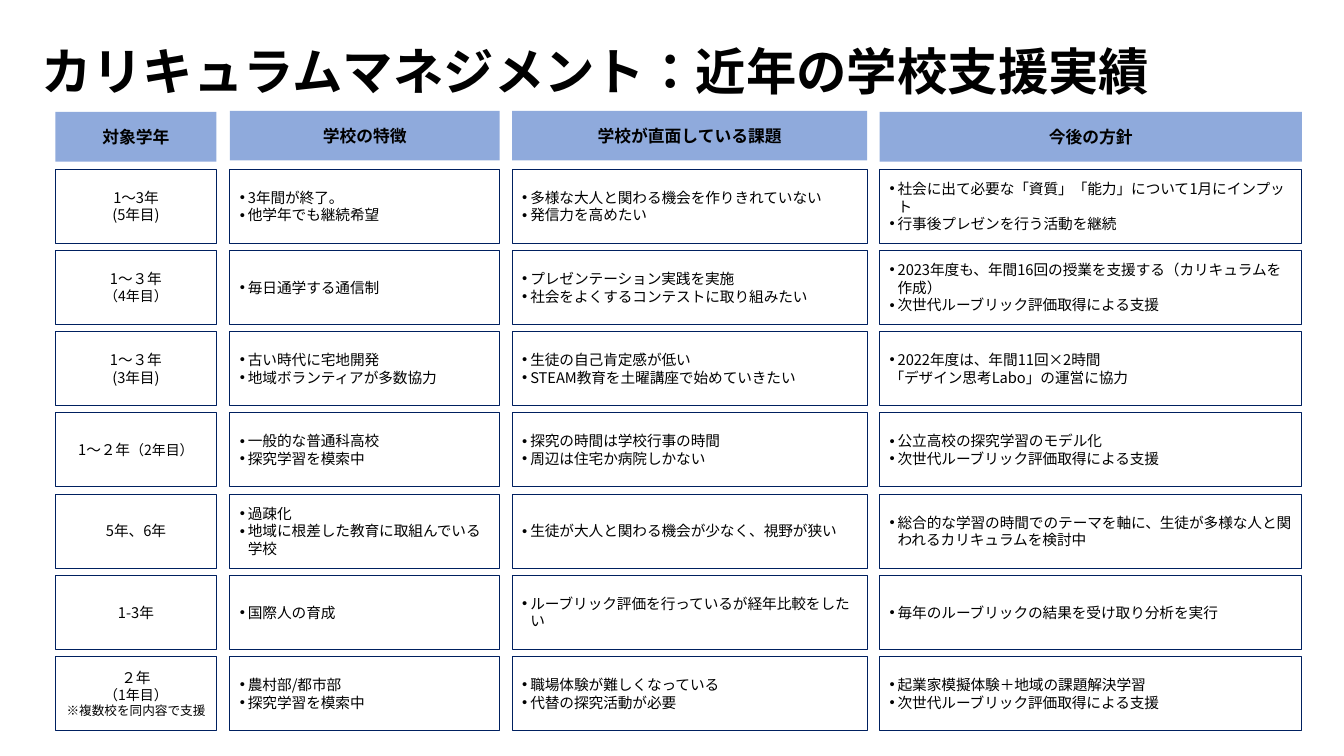
import lxml.etree
import pptx
import pptx.dml.color
import pptx.enum.lang
import pptx.enum.shapes
import pptx.enum.text
import pptx.oxml.ns
import pptx.util

Pt = pptx.util.Pt
ALIGN = pptx.enum.text.PP_ALIGN
MIDDLE = pptx.enum.text.MSO_ANCHOR.MIDDLE
COLORS = {"text": "000000", "header": "8FAADC", "border": "002060"}

# Columns: left, width, header top, header text
COLUMNS = [
    (39.6, 115, 80, "対象学年"),
    (164.2, 192.7, 79.2, "学校の特徴"),
    (365.9, 253.5, 79.2, "学校が直面している課題"),
    (628.3, 301.7, 80, "今後の方針"),
]
HEADER_HEIGHT = 35.4
ROW_TOP, ROW_PITCH, ROW_HEIGHT = 120.9, 58, 52.9

# Rows: grade lines, each a list of (text, size), then three lists of points
ROWS = [
    ([[("1～3年", 10.5)], [("(5年目)", 10.5)]],
     ["3年間が終了。", "他学年でも継続希望"],
     ["多様な大人と関わる機会を作りきれていない", "発信力を高めたい"],
     ["社会に出て必要な「資質」「能力」について1月にインプット",
      "行事後プレゼンを行う活動を継続"]),
    ([[("1～３年", 10.5)], [("（4年目）", 10)]],
     ["毎日通学する通信制"],
     ["プレゼンテーション実践を実施", "社会をよくするコンテストに取り組みたい"],
     ["2023年度も、年間16回の授業を支援する（カリキュラムを作成）",
      "次世代ルーブリック評価取得による支援"]),
    ([[("1～３年", 10.5)], [("(3年目)", 10.5)]],
     ["古い時代に宅地開発", "地域ボランティアが多数協力"],
     ["生徒の自己肯定感が低い", "STEAM教育を土曜講座で始めていきたい"],
     ["2022年度は、年間11回×2時間", "「デザイン思考Labo」の運営に協力"]),
    ([[("1～２年", 10.5), ("（2年目）", 10)]],
     ["一般的な普通科高校", "探究学習を模索中"],
     ["探究の時間は学校行事の時間", "周辺は住宅か病院しかない"],
     ["公立高校の探究学習のモデル化", "次世代ルーブリック評価取得による支援"]),
    ([[("5年、6年", 10.5)]],
     ["過疎化", "地域に根差した教育に取組んでいる学校"],
     ["生徒が大人と関わる機会が少なく、視野が狭い"],
     ["総合的な学習の時間でのテーマを軸に、生徒が多様な人と関われるカリキュラムを検討中"]),
    ([[("1-3年", 10.5)]],
     ["国際人の育成"],
     ["ルーブリック評価を行っているが経年比較をしたい"],
     ["毎年のルーブリックの結果を受け取り分析を実行"]),
    ([[("２年", 10.5)], [("（1年目）", 10)], [("※複数校を同内容で支援", 9)]],
     ["農村部/都市部", "探究学習を模索中"],
     ["職場体験が難しくなっている", "代替の探究活動が必要"],
     ["起業家模擬体験＋地域の課題解決学習", "次世代ルーブリック評価取得による支援"]),
]


class SlideBuilder:
    title_font = "Arial"
    body_font = "Noto Sans CJK JP"

    def __init__(self, slide):
        self.slide = slide

    def color(self, name):
        return pptx.dml.color.RGBColor.from_string(COLORS[name])

    def span(self, para, text, size, font, bold=False):
        span = para.add_run()
        span.text = text
        span.font.size = Pt(size)
        span.font.name = font
        span.font.bold = bold
        span.font.language_id = pptx.enum.lang.MSO_LANGUAGE_ID.JAPANESE
        span.font.color.rgb = self.color("text")
        east_asian = lxml.etree.SubElement(
            span.font._element, pptx.oxml.ns.qn("a:ea"))
        east_asian.set("typeface", self.body_font)

    def title(self, text):
        box = self.slide.shapes.title
        box.left, box.top, box.width, box.height = Pt(30), Pt(37.4), Pt(900), Pt(33.1)
        frame = box.text_frame
        frame.margin_left = frame.margin_right = 0
        frame.margin_top = frame.margin_bottom = 0
        frame.vertical_anchor = MIDDLE
        frame.word_wrap = True
        frame.auto_size = pptx.enum.text.MSO_AUTO_SIZE.NONE
        para = frame.paragraphs[0]
        para.alignment = ALIGN.LEFT
        para.line_spacing = 0.8
        self.span(para, text, 36, self.title_font, bold=True)

    def box(self, left, top, width, height, fill=None, line=None):
        box = self.slide.shapes.add_shape(
            pptx.enum.shapes.MSO_SHAPE.RECTANGLE,
            Pt(left), Pt(top), Pt(width), Pt(height))
        box.shadow.inherit = False
        if fill:
            box.fill.solid()
            box.fill.fore_color.rgb = self.color(fill)
        else:
            box.fill.background()
        if line:
            box.line.color.rgb = self.color(line)
            box.line.width = Pt(0.75)
        else:
            box.line.fill.background()
        box.text_frame.word_wrap = True
        box.text_frame.vertical_anchor = MIDDLE
        return box.text_frame

    def paragraphs(self, frame, lines, align):
        for index, line in enumerate(lines):
            para = frame.add_paragraph() if index else frame.paragraphs[0]
            para.alignment = align
            yield para, line

    def header(self, left, width, top, text):
        frame = self.box(left, top, width, HEADER_HEIGHT, fill="header")
        for para, line in self.paragraphs(frame, [text], ALIGN.CENTER):
            self.span(para, line, 12, self.body_font, bold=True)
        return frame

    def grade_cell(self, left, top, width, lines):
        frame = self.box(left, top, width, ROW_HEIGHT, line="border")
        for para, line in self.paragraphs(frame, lines, ALIGN.CENTER):
            for text, size in line:
                self.span(para, text, size, self.body_font)

    def list_cell(self, left, top, width, points):
        frame = self.box(left, top, width, ROW_HEIGHT, line="border")
        for para, text in self.paragraphs(frame, points, ALIGN.LEFT):
            # A line that opens with a quotation bracket carries no bullet
            if not text.startswith("「"):
                self.bullet(para)
            self.span(para, text, 10.5, self.body_font)

    def bullet(self, para):
        properties = para._p.get_or_add_pPr()
        properties.set("marL", str(Pt(5.8)))
        properties.set("indent", str(-Pt(5.8)))
        font = lxml.etree.SubElement(properties, pptx.oxml.ns.qn("a:buFont"))
        font.set("typeface", "Arial")
        mark = lxml.etree.SubElement(properties, pptx.oxml.ns.qn("a:buChar"))
        mark.set("char", "•")


def main():
    deck = pptx.Presentation()
    deck.slide_width, deck.slide_height = Pt(960), Pt(540)
    page = SlideBuilder(deck.slides.add_slide(deck.slide_layouts[5]))
    page.title("カリキュラムマネジメント：近年の学校支援実績")

    # Header row
    headers = [page.header(*column) for column in COLUMNS]
    headers[0].margin_left = headers[0].margin_right = 0

    # One row of boxes per school
    for index, (grades, *lists) in enumerate(ROWS):
        top = ROW_TOP + index * ROW_PITCH
        left, width = COLUMNS[0][:2]
        page.grade_cell(left, top, width, grades)
        for (left, width, *_), points in zip(COLUMNS[1:], lists):
            page.list_cell(left, top, width, points)

    deck.save("out.pptx")


if __name__ == "__main__":
    main()
